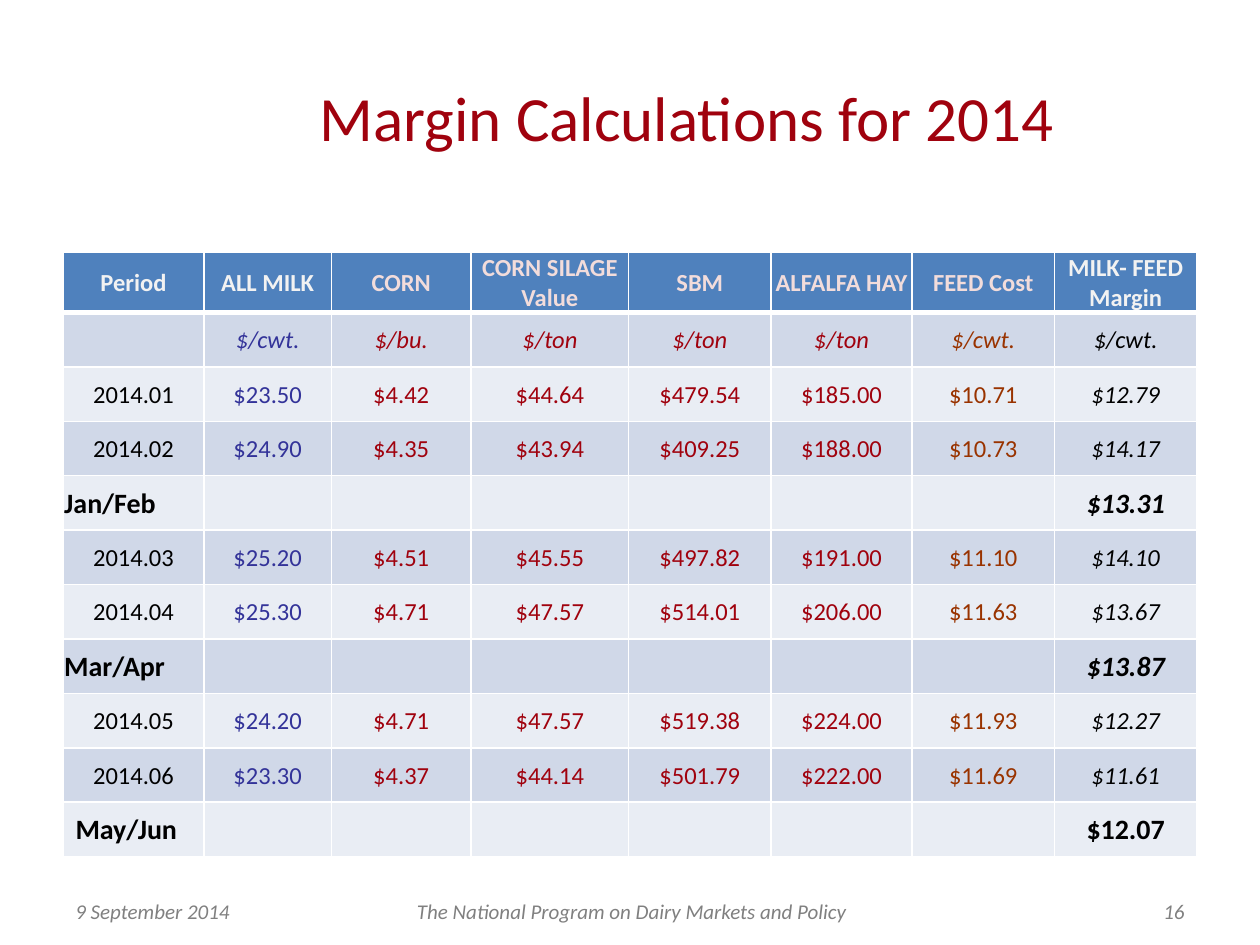
from dataclasses import dataclass

from lxml import etree
from pptx import Presentation
from pptx import util as u
from pptx.dml.color import RGBColor
from pptx.enum import text
from pptx.oxml import ns

LEFT, CENTER, RIGHT = text.PP_ALIGN.LEFT, text.PP_ALIGN.CENTER, text.PP_ALIGN.RIGHT


@dataclass
class Theme:
    font: str = "Calibri"
    title_size: int = 36
    total_size: int = 16
    body_size: int = 14
    footer_size: int = 12
    red: str = "A0020E"
    blue: str = "333399"
    brown: str = "993300"
    black: str = "000000"
    gray: str = "808080"
    head_light: str = "F2F2F2"
    head_pink: str = "F2DCDB"
    head_fill: str = "4F81BD"
    bands: tuple = ("D0D8E8", "E9EDF4")
    border: str = "FFFFFF"


class Deck:
    """Holds the theme and the current slide."""

    def __init__(self, theme):
        self.theme = theme
        self.prs = Presentation()
        self.prs.slide_width, self.prs.slide_height = u.Inches(10), u.Inches(7.5)
        self.s = self.prs.slides.add_slide(self.prs.slide_layouts[6])

    def add_text(self, tf, words, size, color, align=CENTER, **style):
        p = tf.paragraphs[0]
        p.alignment = align
        r = p.add_run()
        r.text = words
        fmt = {"name": self.theme.font, "size": u.Pt(size), **style}
        for name, value in fmt.items():
            setattr(r.font, name, value)
        r.font.color.rgb = RGBColor.from_string(color)

    def text_box(self, box, words, size, color, align=CENTER, **style):
        sp = self.s.shapes.add_textbox(*map(u.Inches, box))
        tf = sp.text_frame
        fmt = {"word_wrap": True, "vertical_anchor": text.MSO_ANCHOR.MIDDLE,
               "margin_top": 0, "margin_bottom": 0}
        for name, value in fmt.items():
            setattr(tf, name, value)
        self.add_text(tf, words, size, color, align, **style)

    def table(self, box, widths, heights):
        shape = self.s.shapes.add_table(len(heights), len(widths), *map(u.Inches, box))
        table = shape.table
        for column, width in zip(table.columns, widths):
            column.width = u.Inches(width)
        for row, height in zip(table.rows, heights):
            row.height = u.Inches(height)
        return table

    def cell(self, cell, fill, tight=True, top=1, bottom=1):
        cell.vertical_anchor = text.MSO_ANCHOR.MIDDLE
        if tight:
            margins = {"left": 0.01, "right": 0.01, "top": 0.01, "bottom": 0}
            for side, margin in margins.items():
                setattr(cell, f"margin_{side}", u.Inches(margin))
        # Borders go before the fill in the cell properties
        tc_pr = cell._tc.get_or_add_tcPr()
        for side, width in {"L": 1, "R": 1, "T": top, "B": bottom}.items():
            ln = etree.SubElement(tc_pr, ns.qn(f"a:ln{side}"), w=str(u.Pt(width)))
            solid = etree.SubElement(ln, ns.qn("a:solidFill"))
            etree.SubElement(solid, ns.qn("a:srgbClr"), val=self.theme.border)
        cell.fill.solid()
        cell.fill.fore_color.rgb = RGBColor.from_string(fill)


HEADERS = ["Period", "ALL MILK", "CORN", "CORN SILAGE Value", "SBM",
           "ALFALFA HAY", "FEED Cost", "MILK- FEED Margin"]
UNITS = ["", "$/cwt.", "$/bu.", "$/ton", "$/ton", "$/ton", "$/cwt.", "$/cwt."]
MONTHS = [
    ["2014.01", 23.50, 4.42, 44.64, 479.54, 185.00, 10.71, 12.79],
    ["2014.02", 24.90, 4.35, 43.94, 409.25, 188.00, 10.73, 14.17],
    ["2014.03", 25.20, 4.51, 45.55, 497.82, 191.00, 11.10, 14.10],
    ["2014.04", 25.30, 4.71, 47.57, 514.01, 206.00, 11.63, 13.67],
    ["2014.05", 24.20, 4.71, 47.57, 519.38, 224.00, 11.93, 12.27],
    ["2014.06", 23.30, 4.37, 44.14, 501.79, 222.00, 11.69, 11.61],
]
TOTALS = [("Jan/Feb", 13.31), ("Mar/Apr", 13.87), ("May/Jun", 12.07)]
WIDTHS = [1.12, 1.01, 1.11, 1.25, 1.13, 1.12, 1.13, 1.13]
TABLE_HEIGHT, HEAD_HEIGHT = 4.8, 0.48


def table_rows():
    """Yield each row's kind and its words, two months to a total."""
    yield "head", HEADERS
    yield "unit", UNITS
    for i, (period, margin) in enumerate(TOTALS):
        for name, *values in MONTHS[2 * i:2 * i + 2]:
            yield "month", [name] + [f"${v:.2f}" for v in values]
        yield "total", [period] + [""] * 6 + [f"${margin:.2f}"]


def main():
    t = Theme()
    deck = Deck(t)

    # Title
    deck.text_box((1.4, 0.3, 8.1, 1.25), "Margin Calculations for 2014", t.title_size, t.red)

    # Margin table
    rows = list(table_rows())
    body_height = (TABLE_HEIGHT - HEAD_HEIGHT) / (len(rows) - 1)
    heights = [HEAD_HEIGHT] + [body_height] * (len(rows) - 1)
    table = deck.table((0.5, 2, sum(WIDTHS), TABLE_HEIGHT), WIDTHS, heights)
    head_colors = [t.head_light] * 2 + [t.head_pink] * 5 + [t.head_light]
    body_colors = [t.black, t.blue] + [t.red] * 4 + [t.brown, t.black]
    last_row, last_col = len(rows) - 1, len(WIDTHS) - 1

    for i, (kind, words) in enumerate(rows):
        head, total = kind == "head", kind == "total"
        fill = t.head_fill if head else t.bands[(i - 1) % 2]
        colors = head_colors if head else body_colors
        for j, word in enumerate(words):
            cell = table.cell(i, j)
            deck.cell(cell, fill, tight=i < last_row or 0 < j < last_col,
                      top=3 if i == 1 else 1, bottom=3 if head else 1)
            if word:
                italic = kind == "unit" or (j == last_col and not head and i < last_row)
                deck.add_text(cell.text_frame, word, t.total_size if total else t.body_size,
                              colors[j], LEFT if total and j == 0 else CENTER,
                              bold=head or total, italic=italic)

    # Footer
    footers = [(0.5, 1.86, "9 September 2014", LEFT),
               (3.02, 3.99, "The National Program on Dairy Markets and Policy", CENTER),
               (8.72, 0.78, "16", RIGHT)]
    for left, width, words, align in footers:
        deck.text_box((left, 7.11, width, 0.24), words, t.footer_size, t.gray, align, italic=True)

    deck.prs.save("out.pptx")


if __name__ == "__main__":
    main()
